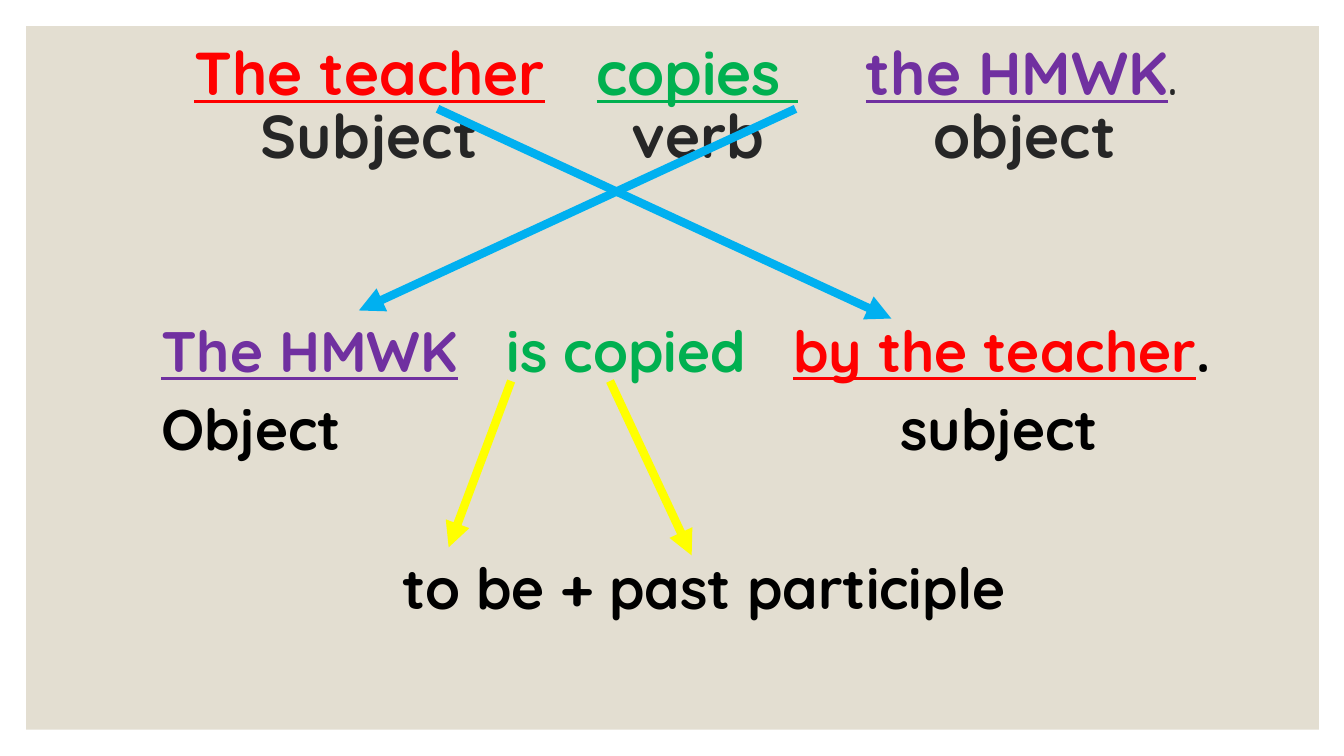
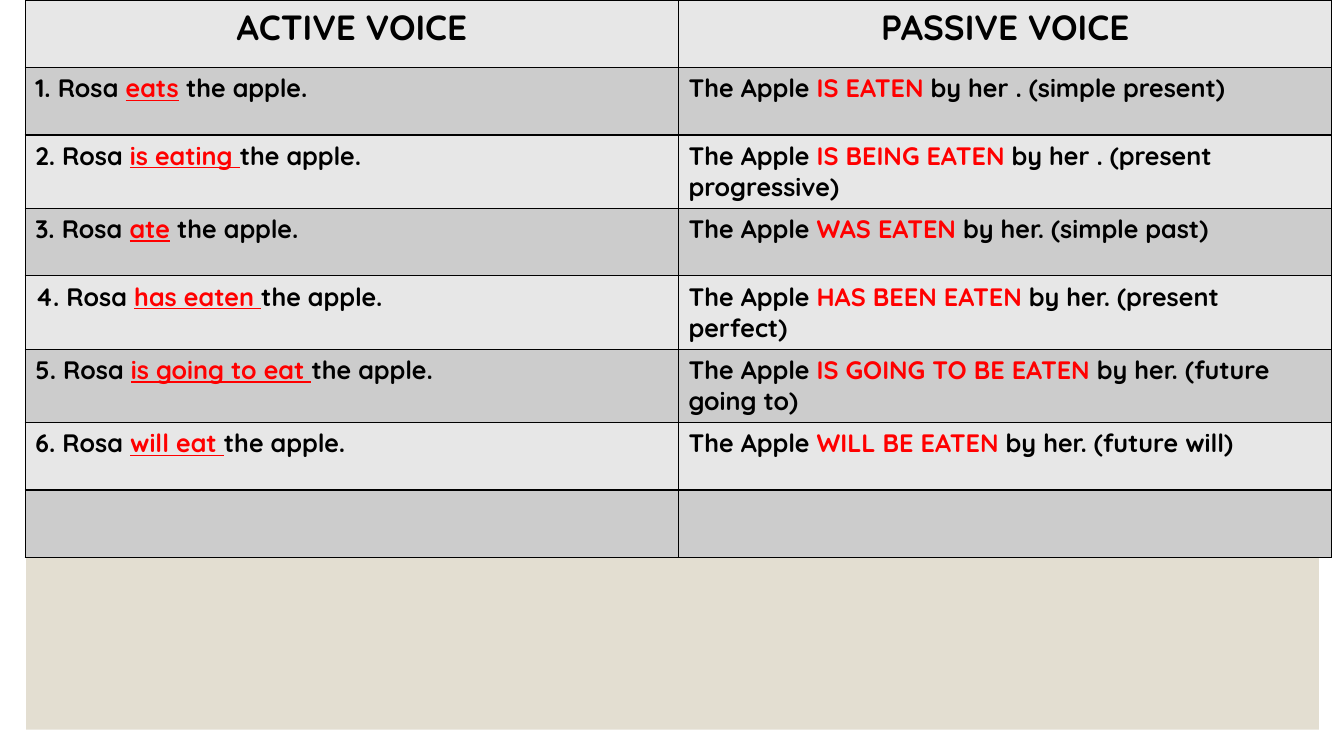
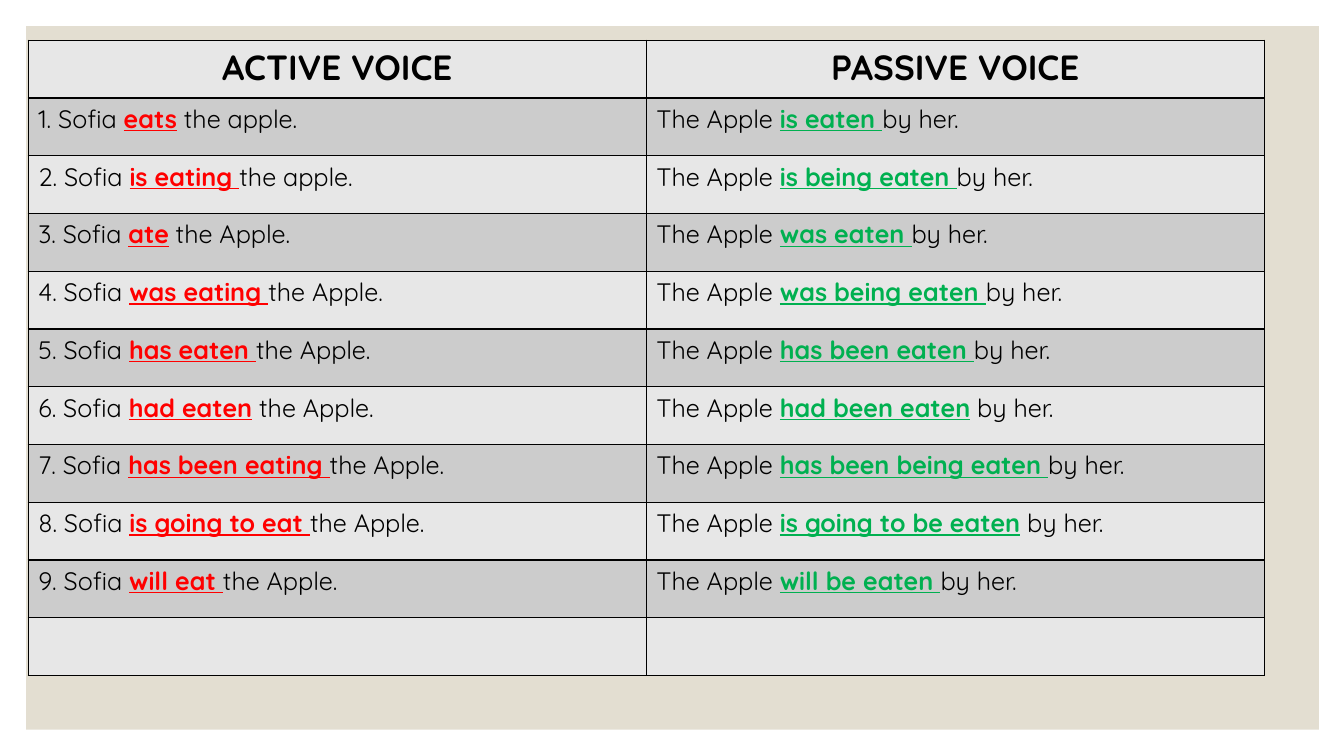
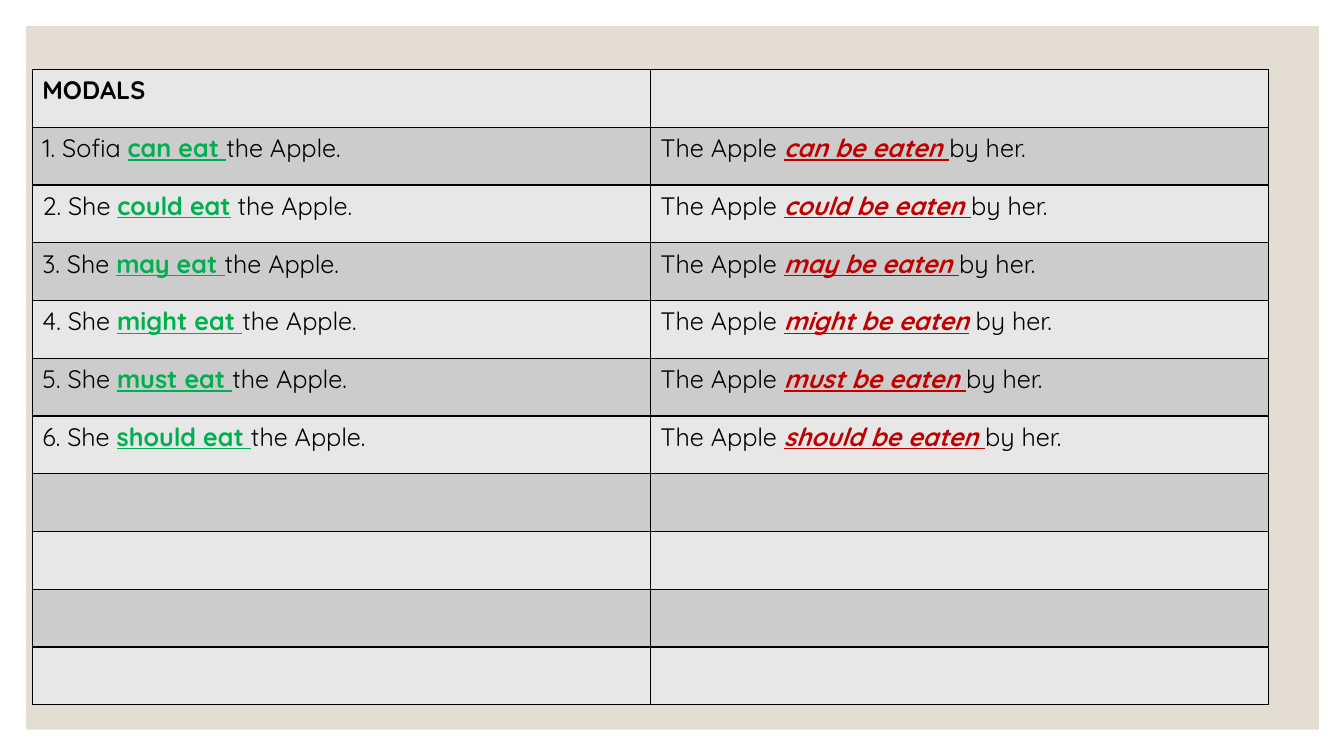
import pptx
import pptx.dml.color
import pptx.enum.shapes
import pptx.enum.text
import pptx.oxml
import pptx.oxml.ns
import pptx.util
from lxml import etree
from pptx.util import Inches

FONT = "Quicksand"
BLACK, INK, BEIGE = "000000", "262626", "E3DED1"
RED, DARK_RED, GREEN, PURPLE = "FF0000", "C00000", "00B050", "7030A0"
BLUE, YELLOW = "00B0F0", "FFFF00"
ROW_FILLS = ("E7E7E7", "CCCCCC")


def rgb(value):
    return pptx.dml.color.RGBColor.from_string(value)


def add_xml(parent, tag, **attributes):
    return etree.SubElement(parent, pptx.oxml.ns.qn(tag), attributes)


class Lesson:
    """Holds the deck, its style and the current page."""

    def __init__(self):
        self.deck = pptx.Presentation()
        self.deck.slide_width = Inches(13.33)
        self.deck.slide_height = Inches(7.5)

    def add_page(self):
        self.page = self.deck.slides.add_slide(self.deck.slide_layouts[6])
        panel = self.page.shapes.add_shape(
            pptx.enum.shapes.MSO_SHAPE.RECTANGLE,
            Inches(0.26), Inches(0.26), Inches(12.82), Inches(6.98))
        panel.shadow.inherit = False
        panel.fill.solid()
        panel.fill.fore_color.rgb = rgb(BEIGE)
        panel.line.fill.background()

    def style_para(self, para, size):
        para.font.name = FONT
        para.font.size = pptx.util.Pt(size)

    def add_span(self, para, text, color=BLACK, bold=True, underline=False, italic=False):
        span = para.add_run()
        span.text = text
        span.font.color.rgb = rgb(color)
        span.font.bold = bold
        span.font.underline = underline
        span.font.italic = italic

    def add_text(self, left, top, width, height, size, lines, anchor, line_spacing=1.0):
        """Each line is (space before, tab stops, spans)."""
        box = self.page.shapes.add_textbox(
            Inches(left), Inches(top), Inches(width), Inches(height))
        frame = box.text_frame
        frame.word_wrap = True
        frame.vertical_anchor = anchor
        for index, (space, stops, spans) in enumerate(lines):
            para = frame.add_paragraph() if index else frame.paragraphs[0]
            para.line_spacing = line_spacing
            para.space_before = pptx.util.Pt(space)
            self.style_para(para, size)
            properties = para._p.get_or_add_pPr()
            tabs = pptx.oxml.parse_xml(
                "<a:tabLst %s/>" % pptx.oxml.ns.nsdecls("a"))
            for stop in stops:
                add_xml(tabs, "a:tab", pos=str(Inches(stop)), algn="l")
            properties.find(pptx.oxml.ns.qn("a:defRPr")).addprevious(tabs)
            for text, *style in spans:
                self.add_span(para, text, *style)

    def add_arrow(self, start, end, color):
        arrow = self.page.shapes.add_connector(
            pptx.enum.shapes.MSO_CONNECTOR.STRAIGHT,
            *(Inches(value) for value in start + end))
        arrow.line.color.rgb = rgb(color)
        arrow.line.width = pptx.util.Pt(6)
        add_xml(arrow.line._get_or_add_ln(), "a:tailEnd", type="triangle")
        add_xml(arrow._element.spPr, "a:effectLst")

    def add_borders(self, cell):
        properties = cell._tc.get_or_add_tcPr()
        for index, side in enumerate(("a:lnL", "a:lnR", "a:lnT", "a:lnB")):
            line = pptx.oxml.parse_xml(
                '<%s w="12700" %s><a:solidFill><a:srgbClr val="%s"/></a:solidFill></%s>'
                % (side, pptx.oxml.ns.nsdecls("a"), BLACK, side))
            properties.insert(index, line)

    def add_voices(self, left, top, column_width, row_height, header, header_size,
                   centred, rows, marks, empty_rows, bold=False):
        """Draw an active/passive table; marks styles the verb between bars, by column."""
        rows = [header] + rows + [("", "")] * empty_rows
        table = self.page.shapes.add_table(
            len(rows), 2, Inches(left), Inches(top),
            Inches(2 * column_width), Inches(row_height * len(rows))).table
        table.first_row = table.horz_banding = False
        for row_index, texts in enumerate(rows):
            table.rows[row_index].height = Inches(row_height)
            for column, text in enumerate(texts):
                cell = table.cell(row_index, column)
                cell.fill.solid()
                cell.fill.fore_color.rgb = rgb(ROW_FILLS[row_index % 2])
                self.add_borders(cell)
                para = cell.text_frame.paragraphs[0]
                is_header = row_index == 0
                self.style_para(para, header_size if is_header else 18)
                if is_header and centred:
                    para.alignment = pptx.enum.text.PP_ALIGN.CENTER
                for part, words in enumerate(text.split("|")):
                    if part == 1:
                        self.add_span(para, words, **marks[column])
                    elif words:
                        self.add_span(para, words, bold=bold or is_header)


def add_transformation(lesson):
    lesson.add_page()
    gap = ("\t",)
    lesson.add_text(1.83, 0.35, 11.5, 1.45, 43.2, [
        (0, (3.99, 6.66), [
            ("The teacher", RED, True, True), gap, ("copies ", GREEN, True, True), gap,
            ("the HMWK", PURPLE, True, True), (".", INK, False)]),
        (0, (0.66, 4.34, 7.33), [("\tSubject\tverb\tobject", INK)]),
    ], pptx.enum.text.MSO_ANCHOR.MIDDLE, 0.87)
    lesson.add_text(1.5, 3.08, 11.5, 3.73, 40.7, [
        (0, (3.43, 6.27), [
            ("The HMWK", PURPLE, True, True), gap, ("is copied", GREEN), gap,
            ("by the teacher", RED, True, True), (".",)]),
        (7, (7.33,), [("Object\tsubject",)]),
        (65, (2.39,), [("\tto be + past participle",)]),
    ], pptx.enum.text.MSO_ANCHOR.TOP)
    for start, end, color in (
            ((5.07, 3.78), (4.45, 5.43), YELLOW),
            ((6.05, 3.78), (6.86, 5.51), YELLOW),
            ((7.89, 1.08), (3.56, 3.08), BLUE),
            ((4.34, 1.08), (8.84, 3.16), BLUE)):
        lesson.add_arrow(start, end, color)


def main():
    lesson = Lesson()
    add_transformation(lesson)

    voices = ("ACTIVE VOICE", "PASSIVE VOICE")
    red_verb = {"color": RED, "underline": True}
    green_verb = {"color": GREEN, "underline": True}

    lesson.add_page()
    lesson.add_voices(0.25, 0, 6.48, 0.67, voices, 25, True, [
        ("1. Rosa |eats| the apple.", "The Apple |IS EATEN |by her . (simple present)"),
        ("2. Rosa |is eating |the apple.",
         "The Apple |IS BEING EATEN |by her . (present progressive)"),
        ("3. Rosa |ate| the apple.", "The Apple |WAS EATEN |by her. (simple past)"),
        ("4. Rosa |has eaten |the apple.",
         "The Apple |HAS BEEN EATEN |by her. (present perfect)"),
        ("5. Rosa |is going to eat |the apple.",
         "The Apple |IS GOING TO BE EATEN |by her. (future going to)"),
        ("6. Rosa |will eat |the apple.", "The Apple |WILL BE EATEN |by her. (future will)"),
    ], (red_verb, {"color": RED}), 1, bold=True)

    lesson.add_page()
    lesson.add_voices(0.28, 0.4, 6.13, 0.573, voices, 25, True, [
        ("1. Sofia |eats| the apple.", "The Apple |is eaten |by her."),
        ("2. Sofia |is eating |the apple.", "The Apple |is being eaten |by her."),
        ("3. Sofia |ate| the Apple.", "The Apple |was eaten |by her."),
        ("4. Sofia |was eating |the Apple.", "The Apple |was being eaten |by her."),
        ("5. Sofia |has eaten |the Apple.", "The Apple |has been eaten |by her."),
        ("6. Sofia |had eaten| the Apple.", "The Apple |had been eaten| by her."),
        ("7. Sofia |has been eating |the Apple.", "The Apple |has been being eaten |by her."),
        ("8. Sofia |is going to eat |the Apple.", "The Apple |is going to be eaten| by her."),
        ("9. Sofia |will eat |the Apple.", "The Apple |will be eaten |by her."),
    ], (red_verb, green_verb), 1)

    lesson.add_page()
    modals = [
        (f"{number}. {who} |{modal} eat{inner}|{outer}the Apple.",
         f"The Apple |{modal} be eaten{passive_inner}|{passive_outer}by her.")
        for number, (who, modal, inner, outer, passive_inner, passive_outer) in enumerate((
            ("Sofia", "can", " ", "", " ", ""),
            ("She", "could", "", " ", " ", ""),
            ("She", "may", " ", "", " ", ""),
            ("She", "might", " ", "", "", " "),
            ("She", "must", " ", "", " ", ""),
            ("She", "should", " ", "", " ", "")), 1)]
    lesson.add_voices(0.32, 0.69, 6.13, 0.573, ("MODALS", ""), 18, False, modals,
                      (green_verb, {"color": DARK_RED, "underline": True, "italic": True}), 4)

    lesson.deck.save("out.pptx")


if __name__ == "__main__":
    main()
